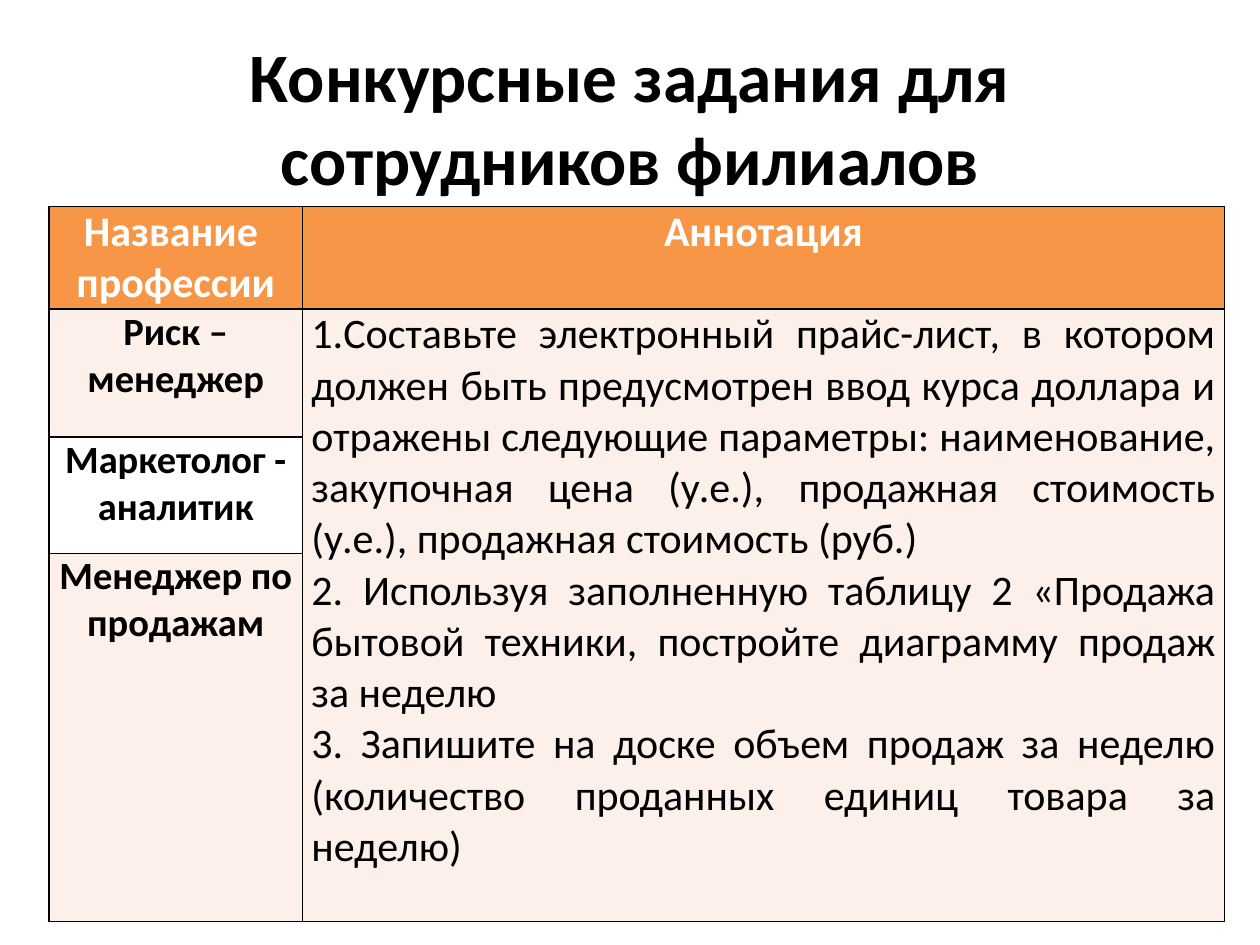
from lxml.etree import SubElement
from pptx import Presentation
from pptx.dml.color import RGBColor as RGB
from pptx.enum.text import MSO_ANCHOR as ANCHOR, PP_ALIGN as ALIGN
from pptx.oxml.ns import qn
from pptx.util import Pt

COLORS = {"text": "000000", "head": "F79646", "head_text": "FFFFFF",
          "band": "FDEFE9", "plain": "FFFFFF", "border": "000000"}
TITLE = "Конкурсные задания для сотрудников филиалов"
HEADERS = [["Название ", "профессии"], ["Аннотация"]]
JOBS = [["Риск –", "менеджер"], ["Маркетолог - аналитик"], ["Менеджер по продажам"]]
TASKS = [
    "1.Составьте электронный прайс-лист, в котором должен быть предусмотрен ввод "
    "курса доллара и отражены следующие параметры: наименование, закупочная цена "
    "(у.е.), продажная стоимость (у.е.), продажная стоимость (руб.)",
    "2. Используя заполненную таблицу 2 «Продажа бытовой техники, постройте "
    "диаграмму продаж за неделю",
    "3. Запишите на доске объем продаж за неделю (количество проданных единиц "
    "товара за неделю)",
]
COL_WIDTHS = [144.7, 527]
ROW_HEIGHTS = [58.5, 73.2, 66.5, 210.5]
TITLE_FORMAT = {"size": Pt(39.6), "bold": True}
HEAD_FORMAT = {"size": Pt(24), "bold": True}
JOB_FORMAT = {"size": Pt(22), "bold": True}
TASK_FORMAT = {"size": Pt(24), "bold": False}


def write(tf, lines, fmt, color="text", align=ALIGN.CENTER):
    tf.word_wrap = True
    for i, line in enumerate(lines):
        p = tf.paragraphs[0] if i == 0 else tf.add_paragraph()
        p.alignment = align
        r = p.add_run()
        r.text = line
        for name, value in {"name": "Calibri", **fmt}.items():
            setattr(r.font, name, value)
        r.font.color.rgb = RGB.from_string(COLORS[color])


def style_cell(cell, fill):
    margins = {"margin_left": 5.2, "margin_right": 5.2, "margin_top": 0, "margin_bottom": 0}
    for name, value in margins.items():
        setattr(cell, name, Pt(value))
    tc_pr = cell._tc.get_or_add_tcPr()
    for side in ("lnL", "lnR", "lnT", "lnB"):
        ln = SubElement(tc_pr, qn(f"a:{side}"), w=str(Pt(1)))
        SubElement(SubElement(ln, qn("a:solidFill")), qn("a:srgbClr"), val=COLORS["border"])
    cell.fill.solid()
    cell.fill.fore_color.rgb = RGB.from_string(COLORS[fill])


prs = Presentation()
prs.slide_width, prs.slide_height = Pt(720), Pt(540)
s = prs.slides.add_slide(prs.slide_layouts[6])

tf = s.shapes.add_textbox(Pt(36), Pt(21.6), Pt(648), Pt(90)).text_frame
tf.vertical_anchor = ANCHOR.MIDDLE
write(tf, [TITLE], TITLE_FORMAT)

table = s.shapes.add_table(len(ROW_HEIGHTS), len(COL_WIDTHS), Pt(28.1), Pt(118.1),
                           Pt(sum(COL_WIDTHS)), Pt(sum(ROW_HEIGHTS))).table
for col, width in zip(table.columns, COL_WIDTHS):
    col.width = Pt(width)
for row, height in zip(table.rows, ROW_HEIGHTS):
    row.height = Pt(height)

for c, lines in enumerate(HEADERS):
    style_cell(table.cell(0, c), "head")
    write(table.cell(0, c).text_frame, lines, HEAD_FORMAT, "head_text")
for r, lines in enumerate(JOBS, 1):
    style_cell(table.cell(r, 0), "band" if r % 2 else "plain")
    style_cell(table.cell(r, 1), "band")
    write(table.cell(r, 0).text_frame, lines, JOB_FORMAT)

table.cell(1, 1).merge(table.cell(len(JOBS), 1))
write(table.cell(1, 1).text_frame, TASKS, TASK_FORMAT, align=ALIGN.JUSTIFY)

prs.save("out.pptx")
